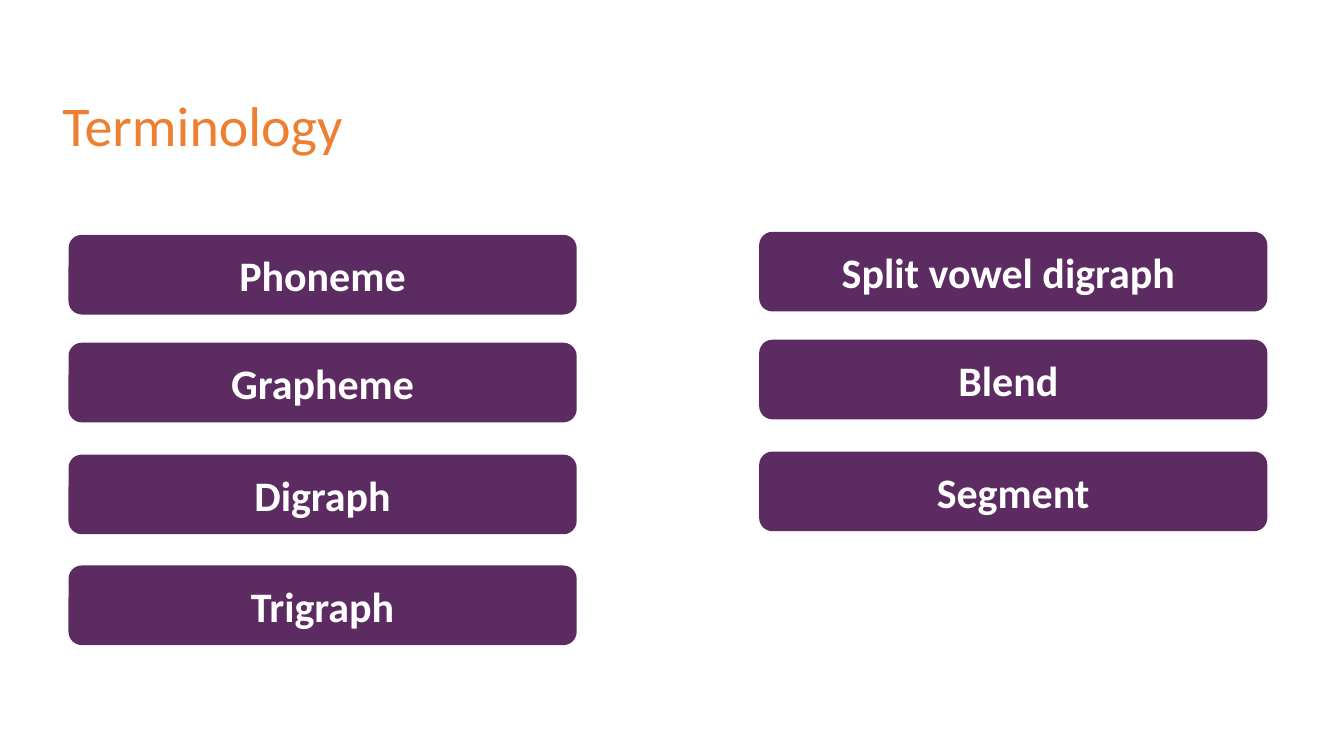
from dataclasses import dataclass

from pptx import Presentation
from pptx.dml.color import RGBColor
from pptx.enum.shapes import MSO_SHAPE
from pptx.enum.text import MSO_ANCHOR, PP_ALIGN
from pptx.util import Inches, Pt


@dataclass(frozen=True)
class Theme:
    font: str = "Calibri"
    orange: RGBColor = RGBColor(0xEE, 0x7E, 0x30)
    purple: RGBColor = RGBColor(0x5C, 0x2B, 0x61)
    white: RGBColor = RGBColor(0xFF, 0xFF, 0xFF)
    title_size: int = 40
    term_size: int = 30


THEME = Theme()
TERM_HEIGHT = 0.79
ROW_OFFSETS = (0, 1.07, 2.18, 3.28)


def add_span(para, text, size, color, bold=False):
    span = para.add_run()
    span.text = text
    span.font.name = THEME.font
    span.font.size = Pt(size)
    span.font.bold = bold
    span.font.color.rgb = color


def add_title(page, text, left, top, width, height):
    box = page.shapes.add_textbox(Inches(left), Inches(top), Inches(width), Inches(height))
    frame = box.text_frame
    frame.word_wrap = True
    frame.vertical_anchor = MSO_ANCHOR.BOTTOM
    para = frame.paragraphs[0]
    para.line_spacing = 0.9
    add_span(para, text, THEME.title_size, THEME.orange)


def add_term_column(page, terms, left, top, width):
    for term, offset in zip(terms, ROW_OFFSETS):
        # Rounded bar
        bar = page.shapes.add_shape(
            MSO_SHAPE.ROUNDED_RECTANGLE,
            Inches(left), Inches(top + offset), Inches(width), Inches(TERM_HEIGHT))
        bar.shadow.inherit = False
        bar.fill.solid()
        bar.fill.fore_color.rgb = THEME.purple
        bar.line.fill.background()

        # Term
        frame = bar.text_frame
        frame.word_wrap = True
        frame.vertical_anchor = MSO_ANCHOR.MIDDLE
        para = frame.paragraphs[0]
        para.alignment = PP_ALIGN.CENTER
        add_span(para, term, THEME.term_size, THEME.white, bold=True)


def main():
    deck = Presentation()
    deck.slide_width = Inches(13.33)
    deck.slide_height = Inches(7.5)
    page = deck.slides.add_slide(deck.slide_layouts[6])

    add_title(page, "Terminology", 0.52, 0.36, 10.71, 1.26)
    add_term_column(page, ("Phoneme", "Grapheme", "Digraph", "Trigraph"), 0.68, 2.33, 5.04)
    add_term_column(page, ("Split vowel digraph ", "Blend ", "Segment"), 7.53, 2.3, 5.04)

    deck.save("out.pptx")


if __name__ == "__main__":
    main()
